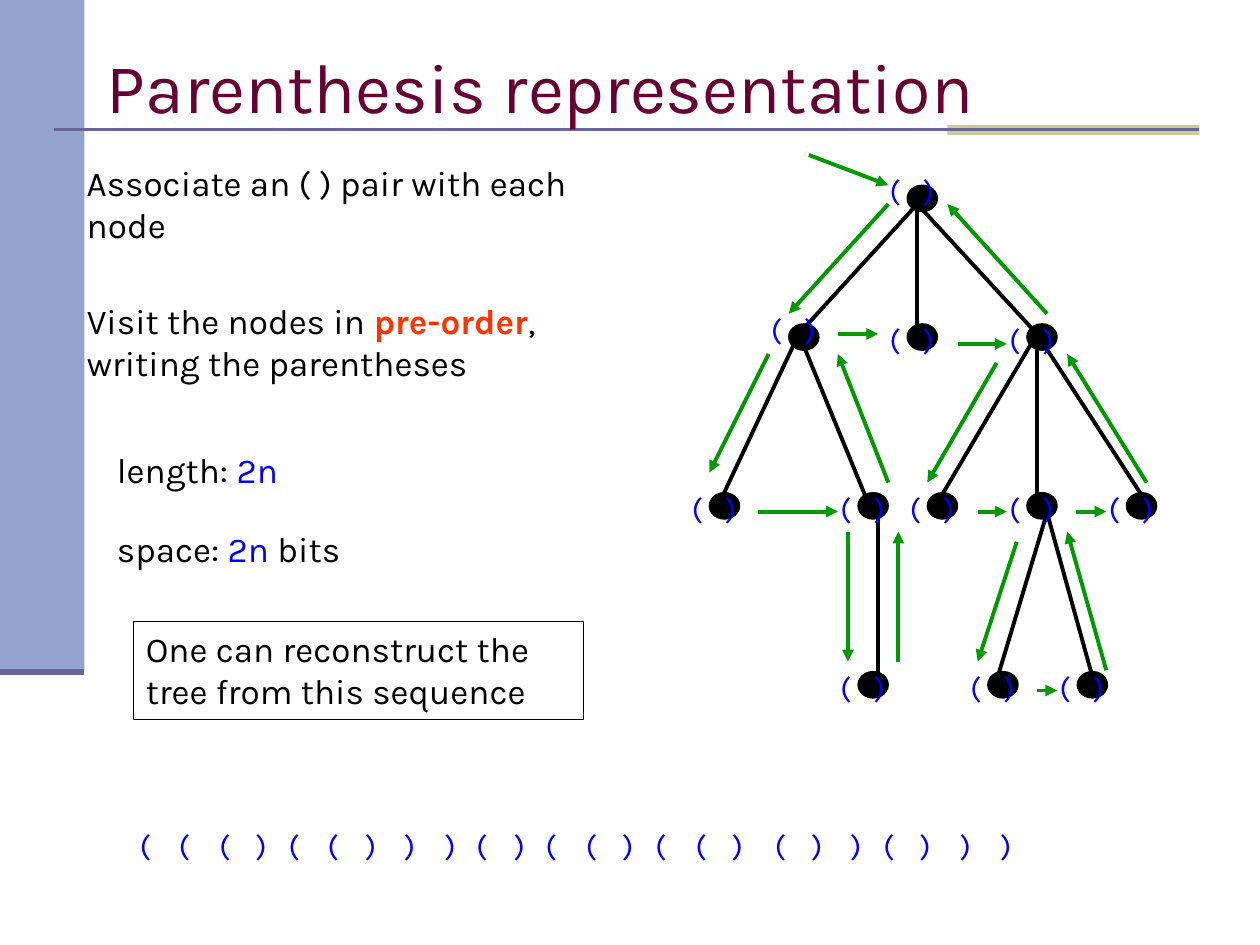
from lxml import etree
from pptx import Presentation
from pptx.dml.color import RGBColor
from pptx.enum.shapes import MSO_CONNECTOR, MSO_SHAPE
from pptx.enum.text import MSO_ANCHOR
from pptx.oxml.ns import qn
from pptx.util import Pt

PX = 9144
FONT = "Karla"
LINE = MSO_CONNECTOR.STRAIGHT
RECT, OVAL = MSO_SHAPE.RECTANGLE, MSO_SHAPE.OVAL
TOP, MIDDLE = MSO_ANCHOR.TOP, MSO_ANCHOR.MIDDLE
COLORS = {
    "band": "95A3D1", "rule": "666699", "accent": "CCCC99", "title": "660033",
    "ink": "000000", "paren": "0000FF", "walk": "009900", "key": "FF3300",
}

NODE_W, NODE_H = 24, 21
NODES = {
    "root": (181, 24),
    "left": (87, 134), "middle": (181, 134), "right": (276, 134),
    "left_a": (24, 268), "left_b": (142, 268),
    "right_a": (197, 268), "right_b": (276, 268), "right_c": (355, 268),
    "left_b_a": (142, 410), "right_b_a": (245, 410), "right_b_b": (316, 410),
}
HIGH_LABELS = ("root", "left")
EDGES = [
    ("root", "middle", (8, 15), (8, 8)),
    ("root", "left", (8, 15), (8, 8)),
    ("root", "right", (8, 15), (8, 8)),
    ("left", "left_a", (8, 8), (8, 8)),
    ("left", "left_b", (8, 8), (8, 8)),
    ("right", "right_b", (8, 8), (8, 8)),
    ("right", "right_a", (8, 8), (8, 8)),
    ("right", "right_c", (8, 8), (16, 8)),
    ("left_b", "left_b_a", (16, 8), (16, 7)),
    ("right_b", "right_b_a", (16, 16), (7, 7)),
    ("right_b", "right_b_b", (16, 16), (15, 15)),
]
WALK = [
    (103, 0, 166, 24), (166, 39, 87, 126), (71, 158, 24, 252),
    (63, 283, 126, 283), (134, 299, 134, 402), (174, 402, 174, 299),
    (166, 260, 126, 158), (126, 142, 158, 142), (221, 150, 260, 150),
    (252, 165, 197, 260), (237, 283, 260, 283), (268, 307, 237, 402),
    (284, 425, 300, 425), (339, 409, 308, 299), (315, 283, 339, 283),
    (371, 260, 308, 158), (292, 126, 213, 39),
]
SEQUENCE = "((()(()))()(()(()())())" + ")"
SEQUENCE_LEFTS = (0, 31, 63, 92, 118, 149, 179, 210, 242, 267, 297, 322,
                  354, 383, 409, 441, 470, 504, 533, 564, 590, 619, 651, 683)


def rgb(name):
    """Return the named colour."""
    return RGBColor.from_string(COLORS[name])


def add_box(s, kind, x, y, w, h, fill=None, line=None):
    """Add a preset shape with the given fill and outline."""
    sp = s.shapes.add_shape(kind, x * PX, y * PX, w * PX, h * PX)
    sp.shadow.inherit = False
    if fill:
        sp.fill.solid()
        sp.fill.fore_color.rgb = rgb(fill)
    else:
        sp.fill.background()
    if line:
        sp.line.color.rgb = rgb(line)
        sp.line.width = Pt(0.75)
    else:
        sp.line.fill.background()
    return sp


def add_line(s, x1, y1, x2, y2, color, width, arrow=False):
    """Add a straight line, with an arrowhead at its end if asked."""
    cn = s.shapes.add_connector(LINE, x1 * PX, y1 * PX, x2 * PX, y2 * PX)
    cn.line.color.rgb = rgb(color)
    cn.line.width = Pt(width)
    if arrow:
        tail = etree.SubElement(cn.line._get_or_add_ln(), qn("a:tailEnd"))
        tail.set("type", "triangle")
    etree.SubElement(cn._element.spPr, qn("a:effectLst"))


def add_text(s, x, y, w, h, paragraphs, size, anchor=TOP):
    """Add a text box from paragraphs of (text, colour) runs."""
    tb = s.shapes.add_textbox(x * PX, y * PX, w * PX, h * PX)
    tf = tb.text_frame
    tf.word_wrap = True
    tf.vertical_anchor = anchor
    for i, runs in enumerate(paragraphs):
        p = tf.paragraphs[0] if i == 0 else tf.add_paragraph()
        p.font.name = FONT
        p.font.size = Pt(size)
        for text, color in runs:
            r = p.add_run()
            r.text = text
            r.font.color.rgb = rgb(color)
            if color == "key":
                r.font.bold = True


def add_frame(s, x, y, w):
    """Place the side band, the title and the rule under it."""
    add_box(s, RECT, x, y, 67, 533, "band")
    add_box(s, RECT, x + w - 248, y + 99, 200, 8, "accent")
    add_line(s, x + 43, y + 103, x + w - 48, y + 103, "rule", 1.5)
    add_line(s, x, y + 533, x + 67, y + 533, "rule", 3.5)
    title = [[("Parenthesis representation", "title")]]
    add_text(s, x + 75, y + 28, 850, 79, title, 40, MIDDLE)


def add_tree(s, x, y):
    """Place the tree, the pair on each node and the walk around it."""
    for nx, ny in NODES.values():
        add_box(s, OVAL, x + nx, y + ny, NODE_W, NODE_H, "ink", "ink")
    for parent, child, (sx, sy), (ex, ey) in EDGES:
        (px, py), (cx, cy) = NODES[parent], NODES[child]
        add_line(s, x + px + sx, y + py + sy, x + cx + ex, y + cy + ey, "ink", 2.25)
    for name, (nx, ny) in NODES.items():
        lift = 16 if name in HIGH_LABELS else 8
        add_text(s, x + nx - 24, y + ny - lift, 69, 40, [[("(   )", "paren")]], 18)
    for x1, y1, x2, y2 in WALK:
        add_line(s, x + x1, y + y1, x + x2, y + y2, "walk", 2.25, arrow=True)


def add_notes_column(s, x, y):
    """Place the explanation and the boxed conclusion."""
    add_text(s, x, y, 467, 77, [[("Associate an ( ) pair with each node", "ink")]], 20)
    add_text(s, x, y + 110, 385, 77, [
        [("Visit the nodes in ", "ink"), ("pre-order", "key"), (",", "ink")],
        [("writing the parentheses", "ink")],
    ], 20)
    add_text(s, x + 24, y + 228, 165, 43, [[("length: ", "ink"), ("2n", "paren")]], 20)
    add_text(s, x + 24, y + 291, 217, 43,
             [[("space: ", "ink"), ("2n ", "paren"), ("bits", "ink")]], 20)
    add_box(s, RECT, x + 47, y + 370, 357, 78, line="ink")
    add_text(s, x + 47, y + 370, 357, 78, [
        [("One can reconstruct the", "ink")], [("tree from this sequence", "ink")],
    ], 20)


def add_sequence(s, x, y):
    """Place the parentheses in the order of the walk."""
    for mark, left in zip(SEQUENCE, SEQUENCE_LEFTS):
        add_text(s, x + left, y, 31, 70, [[(mark, "paren")]], 18)


def main():
    """Build the slide and save it."""
    prs = Presentation()
    prs.slide_width, prs.slide_height = 1000 * PX, 750 * PX
    s = prs.slides.add_slide(prs.slide_layouts[6])
    add_frame(s, 0, 0, 1000)
    add_tree(s, 539, 123)
    add_sequence(s, 101, 651)
    add_notes_column(s, 59, 123)
    prs.save("out.pptx")


if __name__ == "__main__":
    main()
